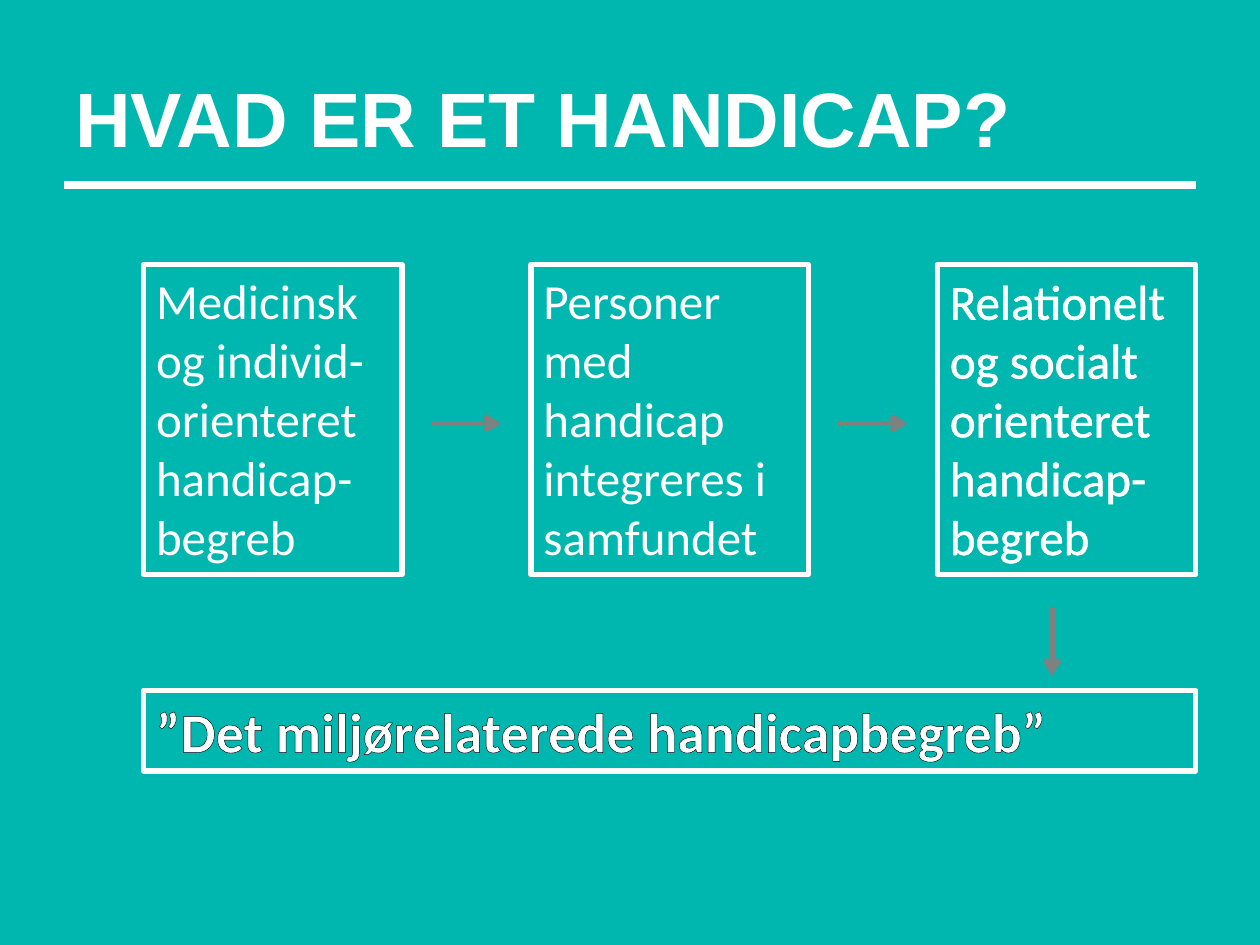
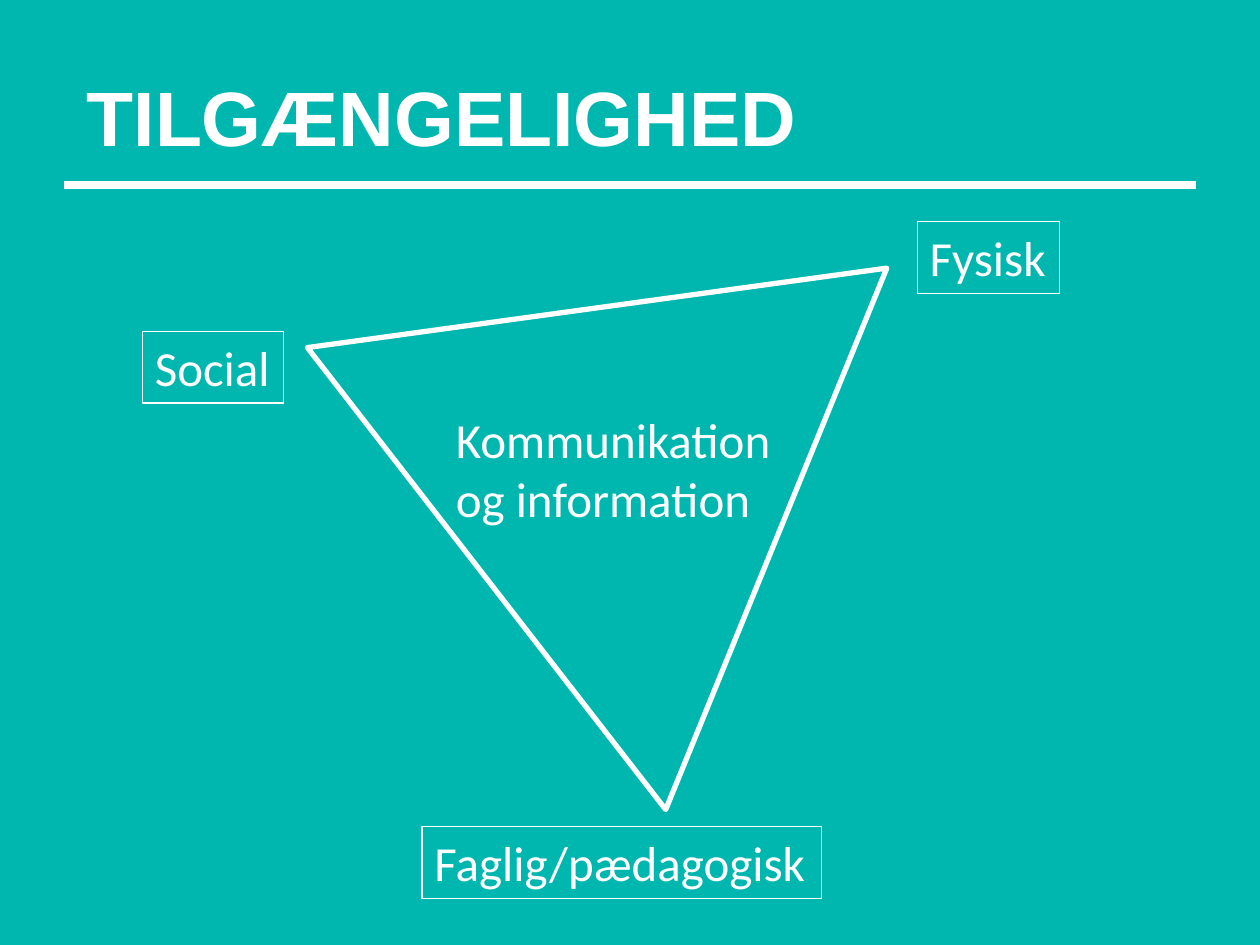
from lxml import etree
from pptx import Presentation, util as u
from pptx.dml.color import RGBColor
from pptx.enum import shapes, text
from pptx.oxml import ns

# The slide is a grid of 100 columns by 75 rows.
COLUMNS, ROWS = 100, 75
CELL = u.Inches(0.1)
TEAL, WHITE, GREY, BLACK = "00B7AF", "FFFFFF", "808080", "000000"
HEADING_FONT, BODY_FONT = "Arial", "Calibri"
MARGIN = 5.1


def cells(*counts):
    return [round(count * CELL) for count in counts]


def colour(hex_string):
    return RGBColor.from_string(hex_string)


def add_element(parent, tag, **attributes):
    return etree.SubElement(parent, ns.qn(tag), attributes)


def write(shape, words, size, font=BODY_FONT, bold=False, wrap=True,
          anchor=text.MSO_ANCHOR.TOP):
    frame = shape.text_frame
    frame.text = words
    frame.word_wrap = wrap
    frame.vertical_anchor = anchor
    paragraph = frame.paragraphs[0]
    paragraph.alignment = text.PP_ALIGN.LEFT
    style = paragraph.runs[0].font
    style.name, style.size, style.bold = font, u.Pt(size), bold
    style.color.rgb = colour(WHITE)


def outline_text(shape, hex_string):
    """Draw a thin line around every letter of the shape."""
    for run in shape.text_frame.paragraphs[0].runs:
        properties = run.font._element
        line = etree.Element(ns.qn("a:ln"), w=str(u.Pt(0.75)))
        fill = add_element(line, "a:solidFill")
        add_element(fill, "a:srgbClr", val=hex_string)
        properties.insert(0, line)


def add_text(slide, area, words, size, **style):
    box = slide.shapes.add_textbox(*cells(*area))
    write(box, words, size, **style)


def add_outlined(slide, kind, area, line_width):
    shape = slide.shapes.add_shape(kind, *cells(*area))
    shape.shadow.inherit = False
    shape.fill.background()
    shape.line.color.rgb = colour(WHITE)
    shape.line.width = u.Pt(line_width)
    return shape


def add_box(slide, area, words, size=28, line_width=3, **style):
    box = add_outlined(slide, shapes.MSO_SHAPE.RECTANGLE, area, line_width)
    write(box, words, size, **style)
    return box


def add_line(slide, start, end, hex_string, width, arrow=False):
    line = slide.shapes.add_connector(
        shapes.MSO_CONNECTOR.STRAIGHT, *cells(*start, *end))
    line.line.color.rgb = colour(hex_string)
    line.line.width = u.Pt(width)
    if arrow:
        add_element(line.line._get_or_add_ln(), "a:tailEnd", type="arrow")
    add_element(line._element.spPr, "a:effectLst")


def add_arrow(slide, centre, down=False):
    x, y = centre
    half = 2.75
    dx, dy = (0, half) if down else (half, 0)
    add_line(slide, (x - dx, y - dy), (x + dx, y + dy), GREY, 3, arrow=True)


def add_titled_slide(presentation, title, left, top):
    slide = presentation.slides.add_slide(presentation.slide_layouts[6])
    add_line(slide, (MARGIN, 14.7), (COLUMNS - MARGIN, 14.7), WHITE, 4.5)
    add_text(slide, (left, top, 90, 12.5), title, 44, font=HEADING_FONT,
             bold=True, anchor=text.MSO_ANCHOR.MIDDLE)
    return slide


def build_concepts(presentation):
    slide = add_titled_slide(presentation, "HVAD ER ET HANDICAP?", 5, 3)
    steps = [("Medicinsk og individ-orienteret handicap-begreb", 20.5),
             ("Personer med handicap integreres i samfundet", 22),
             ("Relationelt og socialt orienteret handicap-begreb", 20.5)]
    first_left, top, height, gap = 11.4, 21, 24.6, 10.25
    left = first_left
    for words, width in steps:
        if left > first_left:
            add_arrow(slide, (left - gap / 2, 33.6))
        box = add_box(slide, (left, top, width, height), words)
        right = left + width
        left = right + gap
    outline_text(box, WHITE)
    add_arrow(slide, (83.5, 50.9), down=True)
    conclusion = add_box(slide, (first_left, 54.8, right - first_left, 6.4),
                         "”Det miljørelaterede handicapbegreb”", 32, bold=True)
    outline_text(conclusion, BLACK)


def build_accessibility(presentation):
    slide = add_titled_slide(presentation, "TILGÆNGELIGHED", 5.9, 2.9)
    triangle = add_outlined(slide, shapes.MSO_SHAPE.ISOSCELES_TRIANGLE,
                            (31.3, 13.5, 46.4, 40.2), 3)
    triangle.rotation = 52.2
    add_element(triangle.line._get_or_add_ln(), "a:round")
    corners = [("Faglig/pædagogisk", 33.5, 65.6, 31.7),
               ("Fysisk", 72.8, 17.6, 11.3),
               ("Social", 11.3, 26.3, 11.2)]
    for words, left, top, width in corners:
        add_box(slide, (left, top, width, 5.7), words, line_width=0.75,
                wrap=False)
    add_text(slide, (35.2, 32, 28.3, 10.4), "Kommunikation og information", 28)


def main():
    presentation = Presentation()
    presentation.slide_width, presentation.slide_height = cells(COLUMNS, ROWS)
    background = presentation.slide_master.background.fill
    background.solid()
    background.fore_color.rgb = colour(TEAL)
    build_concepts(presentation)
    build_accessibility(presentation)
    presentation.save("out.pptx")


if __name__ == "__main__":
    main()
